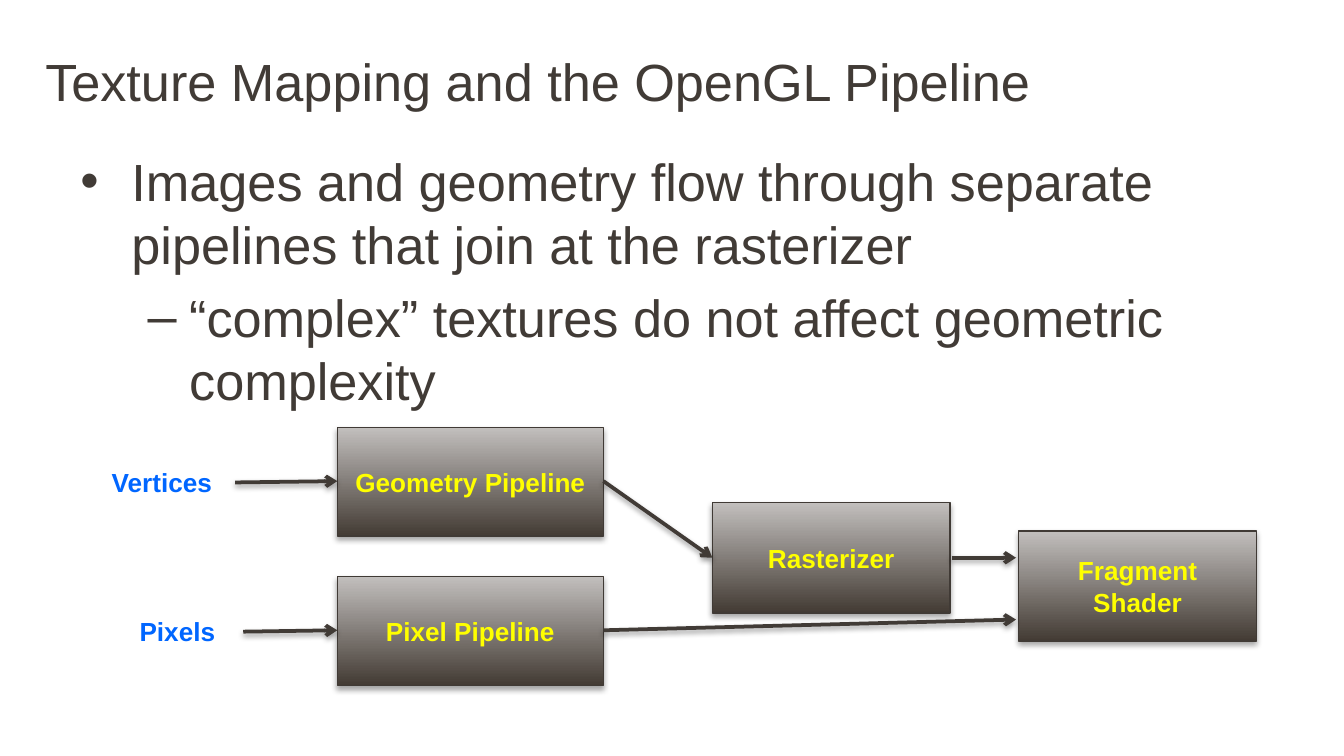
import pptx
import pptx.dml.color
import pptx.enum.shapes
import pptx.enum.text
import pptx.oxml
import pptx.oxml.ns
import pptx.util
from pptx.util import Inches

ALIGN = pptx.enum.text.PP_ALIGN
ANCHOR = pptx.enum.text.MSO_ANCHOR


class Theme:
    font = "Arial"
    text = "413B36"
    outline = "403A35"
    dark, light = "433B34", "C2BFBD"
    stage_text = "FFFF00"
    input_text = "0066FF"
    large, small = 28, 14


def rgb(value):
    return pptx.dml.color.RGBColor.from_string(value)


def add_xml(parent, xml):
    ns = pptx.oxml.ns.nsdecls("a")
    parent.append(pptx.oxml.parse_xml(xml.replace(">", f" {ns}>", 1)))


def add_shadow(sp, opacity, distance):
    """Soft black shadow falling straight down."""
    add_xml(sp._element.spPr, f"""<a:effectLst>
        <a:outerShdw blurRad="{pptx.util.Pt(3.1)}" dist="{pptx.util.Pt(distance)}"
            dir="5400000" rotWithShape="0">
          <a:srgbClr val="000000"><a:alpha val="{opacity * 1000}"/></a:srgbClr>
        </a:outerShdw></a:effectLst>""")


def write(p, text, size=Theme.small, color=Theme.text, bold=False,
          align=ALIGN.CENTER, bullet=None, indent=(0, 0), before=0):
    """Fill one paragraph; indent is (left margin, first line) in inches."""
    p.alignment = align
    p.space_before = pptx.util.Pt(before)
    if bullet:
        pPr = p._p.get_or_add_pPr()
        pPr.set("marL", str(Inches(indent[0])))
        pPr.set("indent", str(Inches(indent[1])))
        add_xml(pPr, f'<a:buFont typeface="{Theme.font}"></a:buFont>')
        add_xml(pPr, f'<a:buChar char="{bullet}"></a:buChar>')
    r = p.add_run()
    r.text = text
    r.font.name = Theme.font
    r.font.size = pptx.util.Pt(size)
    r.font.bold = bold
    r.font.color.rgb = rgb(color)


def set_frame(sp, anchor=ANCHOR.TOP, inset=(0.12, 0.06)):
    tf = sp.text_frame
    tf.word_wrap = True
    tf.vertical_anchor = anchor
    tf.margin_left = tf.margin_right = Inches(inset[0])
    tf.margin_top = tf.margin_bottom = Inches(inset[1])
    return tf


def add_text(s, x, y, w, h, **frame):
    sp = s.shapes.add_textbox(Inches(x), Inches(y), Inches(w), Inches(h))
    return set_frame(sp, **frame)


def add_stage(s, text, x, y, w, h):
    sp = s.shapes.add_shape(pptx.enum.shapes.MSO_SHAPE.RECTANGLE,
                            Inches(x), Inches(y), Inches(w), Inches(h))
    sp.fill.gradient()
    sp.fill.gradient_angle = 90
    for stop, color in zip(sp.fill.gradient_stops, (Theme.dark, Theme.light)):
        stop.color.rgb = rgb(color)
    sp.line.color.rgb = rgb(Theme.outline)
    sp.line.width = pptx.util.Pt(0.75)
    add_shadow(sp, 35, 1.8)
    tf = set_frame(sp, anchor=ANCHOR.MIDDLE)
    write(tf.paragraphs[0], text, color=Theme.stage_text, bold=True)


def add_arrow(s, x1, y1, x2, y2):
    c = s.shapes.add_connector(pptx.enum.shapes.MSO_CONNECTOR.STRAIGHT,
                               Inches(x1), Inches(y1), Inches(x2), Inches(y2))
    c.line.color.rgb = rgb(Theme.text)
    c.line.width = pptx.util.Pt(2)
    add_xml(c.line._get_or_add_ln(), '<a:tailEnd type="arrow"></a:tailEnd>')
    add_shadow(c, 38, 1.6)


def main():
    prs = pptx.Presentation()
    prs.slide_width = Inches(10)
    prs.slide_height = prs.slide_width * 9 // 16
    s = prs.slides.add_slide(prs.slide_layouts[6])

    # Title
    tf = add_text(s, 0, 0.13, 8, 0.94, anchor=ANCHOR.MIDDLE, inset=(0.1, 0.05))
    write(tf.paragraphs[0], "Texture Mapping and the OpenGL Pipeline", size=Theme.large)

    # Bullets
    tf = add_text(s, 0.5, 1.06, 9, 3.71, inset=(0.1, 0.05))
    write(tf.paragraphs[0],
          "Images and geometry flow through separate pipelines that join at the rasterizer",
          size=Theme.large, align=ALIGN.LEFT, bullet="•", indent=(0.38, -0.38))
    p = tf.add_paragraph()
    p.level = 1
    write(p, "“complex” textures do not affect geometric complexity",
          size=Theme.large, align=ALIGN.LEFT, bullet="–", indent=(0.81, -0.31), before=5.6)

    # Pipeline stages
    for stage in (("Geometry Pipeline", 2.51, 3.18, 1.98, 0.81),
                  ("Pixel Pipeline", 2.51, 4.29, 1.98, 0.81),
                  ("Rasterizer", 5.3, 3.74, 1.77, 0.82),
                  ("Fragment Shader", 7.58, 3.95, 1.77, 0.82)):
        add_stage(s, *stage)

    # Inputs
    for text, x, y, w in (("Vertices", 0.67, 3.41, 1.07), ("Pixels", 0.83, 4.52, 0.98)):
        tf = add_text(s, x, y, w, 0.36)
        write(tf.paragraphs[0], text, color=Theme.input_text, bold=True)

    # Flow
    for ends in ((1.75, 3.59, 2.51, 3.58), (4.49, 3.58, 5.3, 4.15),
                 (1.81, 4.7, 2.51, 4.69), (4.49, 4.69, 7.56, 4.61),
                 (7.08, 4.15, 7.56, 4.15)):
        add_arrow(s, *ends)

    prs.save("out.pptx")


if __name__ == "__main__":
    main()
